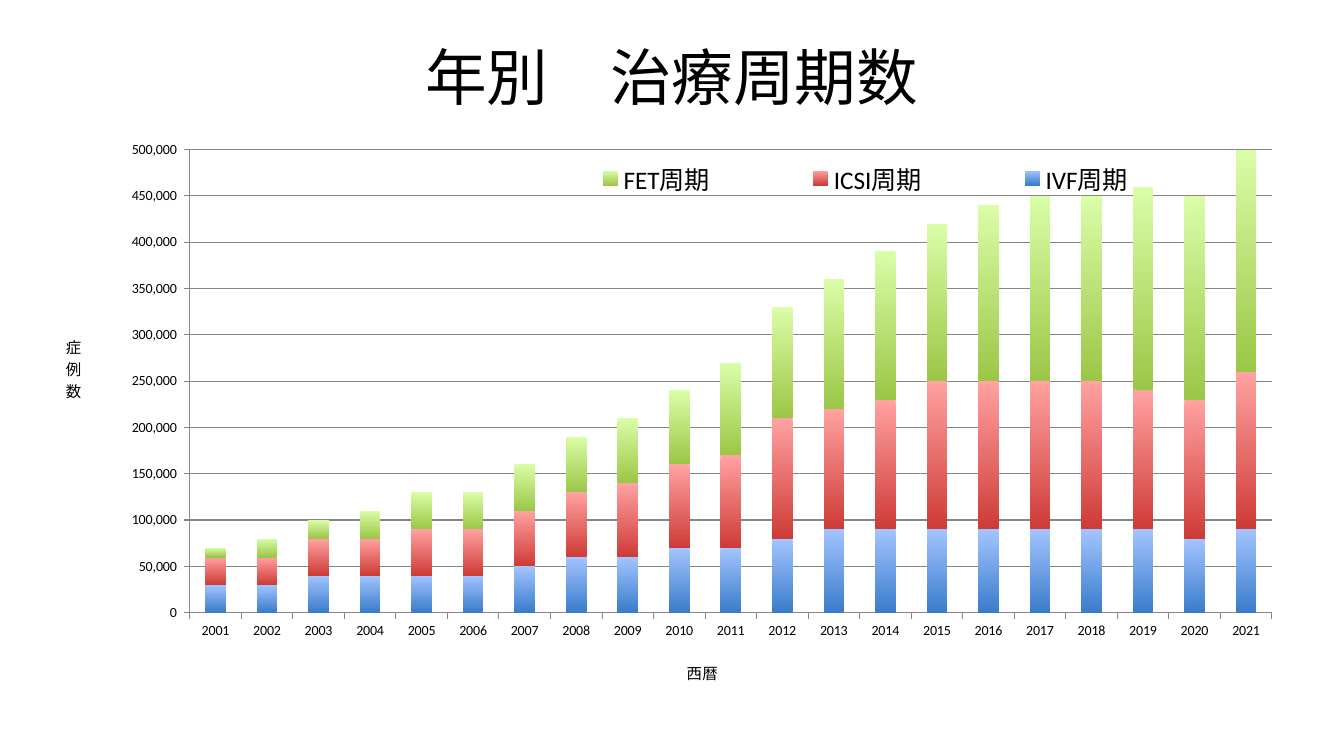
import pptx
import pptx.chart.data
import pptx.dml.color
import pptx.enum.chart
import pptx.enum.text
import pptx.oxml.ns
import pptx.oxml.xmlchemy
import pptx.util

YEARS = [str(year) for year in range(2001, 2022)]

# Cycles in ten thousands, then the gradient from top to bottom
TREATMENTS = {
    "IVF周期": ([3, 3, 4, 4, 4, 4, 5, 6, 6, 7, 7, 8, 9, 9, 9, 9, 9, 9, 9, 8, 9],
              "A3C4FF", "3A7CCB"),
    "ICSI周期": ([3, 3, 4, 4, 5, 5, 6, 7, 8, 9, 10, 13, 13, 14, 16, 16, 16, 16, 15, 15, 17],
               "FFA2A1", "CE3B37"),
    "FET周期": ([1, 2, 2, 3, 4, 4, 5, 6, 7, 8, 10, 12, 14, 16, 17, 19, 20, 20, 22, 22, 24],
              "DAFDA7", "9BC747"),
}


def colour(code):
    return pptx.dml.color.RGBColor.from_string(code)


def style_font(font, size, face, code="000000"):
    font.size = pptx.util.Pt(size)
    font.name = face
    font.bold = False
    font.color.rgb = colour(code)


def write(frame, text, *, size, face, code="000000", align=None):
    """Put one formatted paragraph into a text frame."""
    paragraph = frame.paragraphs[0]
    paragraph.alignment = align
    run = paragraph.add_run()
    run.text = text
    style_font(run.font, size, face, code)
    east_asian = pptx.oxml.xmlchemy.OxmlElement("a:ea")
    east_asian.set("typeface", Deck.cjk)
    run.font._element.find(pptx.oxml.ns.qn("a:latin")).addnext(east_asian)


def place(element, index, inner=False, **shares):
    """Give a chart part a manual layout in shares of the chart's size."""
    for old in element.findall(pptx.oxml.ns.qn("c:layout")):
        element.remove(old)
    layout = pptx.oxml.xmlchemy.OxmlElement("c:layout")
    manual = pptx.oxml.xmlchemy.OxmlElement("c:manualLayout")
    settings = {"layoutTarget": "inner"} if inner else {}
    settings.update(xMode="edge", yMode="edge", **shares)
    for tag, value in settings.items():
        child = pptx.oxml.xmlchemy.OxmlElement(f"c:{tag}")
        child.set("val", str(value))
        manual.append(child)
    layout.append(manual)
    element.insert(index, layout)


class Deck:
    latin = "Calibri"
    cjk = "Noto Sans CJK JP"
    line = "868686"

    def __init__(self):
        self.presentation = pptx.Presentation()
        self.presentation.slide_width = pptx.util.Inches(13.33)
        self.presentation.slide_height = pptx.util.Inches(7.5)
        self.slide = self.presentation.slides.add_slide(self.presentation.slide_layouts[6])

    def box(self, left, top, width, height):
        """Turn shares of the slide's size into lengths."""
        across, down = self.presentation.slide_width, self.presentation.slide_height
        return [int(across * left), int(down * top), int(across * width), int(down * height)]

    def title(self, text, *shares):
        frame = self.slide.shapes.add_textbox(*self.box(*shares)).text_frame
        frame.word_wrap = True
        frame.vertical_anchor = pptx.enum.text.MSO_ANCHOR.MIDDLE
        write(frame, text, size=44, face=self.cjk, align=pptx.enum.text.PP_ALIGN.CENTER)

    def stacked_columns(self, years, treatments, *shares):
        chart_data = pptx.chart.data.CategoryChartData()
        chart_data.categories = years
        for name, (counts, _, _) in treatments.items():
            chart_data.add_series(name, [count * 10000 for count in counts])
        chart = self.slide.shapes.add_chart(
            pptx.enum.chart.XL_CHART_TYPE.COLUMN_STACKED, *self.box(*shares), chart_data).chart
        style_font(chart.font, 10, self.latin)
        chart.has_title = False
        columns = chart.plots[0]
        columns.gap_width, columns.overlap = 150, 100
        columns.vary_by_categories = False
        for series, (_, top, bottom) in zip(columns.series, treatments.values()):
            fill = series.format.fill
            fill.gradient()
            fill.gradient_angle = 270
            for stop, code in zip(fill.gradient_stops, (top, bottom)):
                stop.color.rgb = colour(code)
            series.format.line.fill.background()
            series.invert_if_negative = False
        return chart

    def axis(self, axis, text, x, y):
        axis.major_tick_mark = pptx.enum.chart.XL_TICK_MARK.OUTSIDE
        axis.minor_tick_mark = pptx.enum.chart.XL_TICK_MARK.NONE
        self.rule(axis.format.line)
        style_font(axis.tick_labels.font, 10, self.latin)
        write(axis.axis_title.text_frame, text, size=11, face=self.latin)
        place(axis.axis_title._element, 1, x=x, y=y)

    def rule(self, line):
        line.color.rgb = colour(self.line)
        line.width = pptx.util.Pt(0.75)

    def legend(self, chart, **shares):
        chart.has_legend = True
        chart.legend.position = pptx.enum.chart.XL_LEGEND_POSITION.RIGHT
        chart.legend.include_in_layout = False
        style_font(chart.legend.font, 18, self.latin)
        place(chart.legend._element, 1, **shares)


def main():
    deck = Deck()
    deck.title("年別\u3000治療周期数".replace("\\u3000", "　"), 0.05, 0.04, 0.9, 0.12)

    # Treatment cycles per year
    cycles = deck.stacked_columns(YEARS, TREATMENTS, 0.033, 0.173, 0.933, 0.737)
    place(cycles._chartSpace.chart.plotArea, 0, inner=True, x=0.116, y=0.034, w=0.863, h=0.832)

    # Axes, with the count title stacked upright
    deck.axis(cycles.category_axis, "西暦", 0.51, 0.945)
    cycles.category_axis.has_major_gridlines = False
    counts = cycles.value_axis
    deck.axis(counts, "症例数", 0.015, 0.36)
    counts.minimum_scale, counts.maximum_scale, counts.major_unit = 0, 500000, 50000
    counts.has_major_gridlines = True
    deck.rule(counts.major_gridlines.format.line)
    counts.tick_labels.number_format = r"#,##0_);[Red]\(#,##0\)"
    counts.tick_labels.number_format_is_linked = False
    upright = counts.axis_title.text_frame._txBody.bodyPr
    upright.set("rot", "0")
    upright.set("vert", "wordArtVertRtl")

    # Legend laid across the top of the plot
    deck.legend(cycles, x=0.37, y=0.045, w=0.57, h=0.08)

    deck.presentation.save("out.pptx")


if __name__ == "__main__":
    main()
